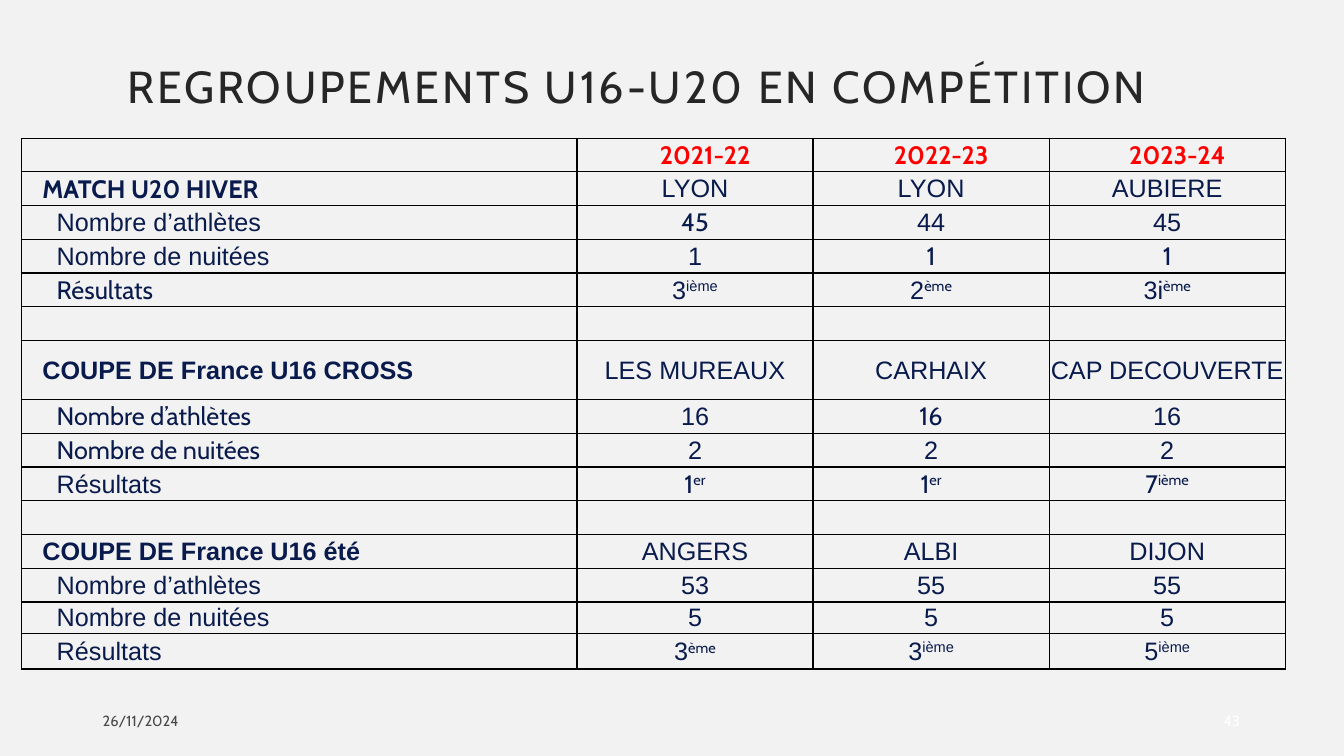
from dataclasses import dataclass

from lxml import etree
from pptx import Presentation
from pptx import util as u
from pptx.dml.color import RGBColor
from pptx.enum import text
from pptx.oxml import ns


@dataclass(frozen=True)
class Theme:
    background: str = "F2F2F2"
    title: str = "262626"
    date: str = "494949"
    number: str = "FFFFFF"
    season: str = "FF0000"
    body: str = "091A4C"
    border: str = "000000"
    display_font: str = "Cabin"
    body_font: str = "Arial"
    title_size: float = 32
    table_size: float = 18
    footer_size: float = 10.5


THEME = Theme()


@dataclass(frozen=True)
class Run:
    text: str
    font: str = THEME.body_font
    color: str = THEME.body
    bold: bool = False
    raised: bool = False


# Kinds of text used in the table
def cabin(words):
    return Run(words, THEME.display_font)


def heading(words, font=THEME.body_font):
    return Run(words, font, bold=True)


def season(words):
    return Run(words, THEME.display_font, THEME.season, bold=True)


def rank(number, suffix, number_font=THEME.body_font, suffix_font=THEME.body_font):
    return [Run(number, number_font), Run(suffix, suffix_font, raised=True)]


CABIN = THEME.display_font
ATHLETES, NIGHTS, RESULTS = "Nombre d’athlètes", "Nombre de nuitées", "Résultats"
EMPTY_ROW = ["", "", "", ""]

ROWS = [
    ["", season("2021-22"), season("2022-23"), season("2023-24")],
    [heading("MATCH U20 HIVER", CABIN), "LYON", "LYON", "AUBIERE"],
    [ATHLETES, cabin("45"), "44", "45"],
    [NIGHTS, "1", cabin("1"), cabin("1")],
    [cabin(RESULTS), rank("3", "ième"), rank("2", "ème", suffix_font=CABIN),
     rank("3i", "ème", suffix_font=CABIN)],
    EMPTY_ROW,
    [heading("COUPE DE France U16 CROSS"), "LES MUREAUX", "CARHAIX", "CAP DECOUVERTE"],
    [cabin(ATHLETES), "16", cabin("16"), "16"],
    [cabin(NIGHTS), "2", "2", "2"],
    [RESULTS, rank("1", "er", CABIN, CABIN), rank("1", "er", CABIN, CABIN),
     rank("7", "ième", CABIN, CABIN)],
    EMPTY_ROW,
    [heading("COUPE DE France U16 été"), "ANGERS", "ALBI", "DIJON"],
    [ATHLETES, "53", "55", "55"],
    [NIGHTS, "5", "5", "5"],
    [RESULTS, rank("3", "ème", suffix_font=CABIN), rank("3", "ième"), rank("5", "ième")],
]
COLUMN_WIDTHS = [14, 5.95, 5.95, 5.95]
ROW_HEIGHT = 0.85
SPECIAL_HEIGHTS = {6: 1.49, 13: 0.79, 14: 0.9}


def add_run(paragraph, words, font, size, color, bold=False):
    run = paragraph.add_run()
    run.text = words
    run.font.name = font
    run.font.size = u.Pt(size)
    run.font.bold = bold
    run.font.color.rgb = RGBColor.from_string(color)
    return run


def add_title(slide, words):
    title = slide.shapes.title
    title.left, title.top = u.Cm(2.34), u.Cm(1.02)
    title.width, title.height = u.Cm(27.43), u.Cm(2.46)
    title.text_frame.vertical_anchor = text.MSO_ANCHOR.MIDDLE
    paragraph = title.text_frame.paragraphs[0]
    paragraph.alignment = text.PP_ALIGN.CENTER
    paragraph.line_spacing = 0.9
    run = add_run(paragraph, words, THEME.display_font, THEME.title_size, THEME.title)
    run.font._element.set("spc", "200")


def add_footer(slide, words, left, width, color, alignment):
    box = slide.shapes.add_textbox(u.Cm(left), u.Cm(17.65), u.Cm(width), u.Cm(1.02))
    frame = box.text_frame
    frame.word_wrap = True
    frame.vertical_anchor = text.MSO_ANCHOR.MIDDLE
    paragraph = frame.paragraphs[0]
    paragraph.alignment = alignment
    add_run(paragraph, words, THEME.display_font, THEME.footer_size, color)


def set_borders(cell):
    properties = cell._tc.get_or_add_tcPr()
    for side in ("lnL", "lnR", "lnT", "lnB"):
        line = etree.SubElement(properties, ns.qn(f"a:{side}"), w=str(u.Pt(1)))
        fill = etree.SubElement(line, ns.qn("a:solidFill"))
        etree.SubElement(fill, ns.qn("a:srgbClr"), val=THEME.border)


def fill_cell(cell, content, left_margin, alignment):
    set_borders(cell)
    cell.fill.background()
    cell.vertical_anchor = text.MSO_ANCHOR.MIDDLE
    cell.margin_left = u.Cm(left_margin)
    cell.margin_right = cell.margin_top = u.Cm(0.02)
    cell.margin_bottom = 0
    paragraph = cell.text_frame.paragraphs[0]
    paragraph.alignment = alignment
    if not content:
        # An empty cell keeps the type size, so its row stays low
        etree.SubElement(paragraph._p, ns.qn("a:endParaRPr"),
                         sz=str(int(THEME.table_size * 100)))
        return
    for part in content if isinstance(content, list) else [content]:
        part = Run(part) if isinstance(part, str) else part
        run = add_run(paragraph, part.text, part.font, THEME.table_size,
                      part.color, part.bold)
        if part.raised:
            run.font._element.set("baseline", "30000")


def cell_layout(row, column, content):
    if column:
        return (0.02 if row else 0.53), text.PP_ALIGN.CENTER
    is_heading = isinstance(content, Run) and content.bold
    return (0.53 if is_heading else 0.89), text.PP_ALIGN.LEFT


def add_results_table(slide):
    heights = [SPECIAL_HEIGHTS.get(row, ROW_HEIGHT) for row in range(len(ROWS))]
    frame = slide.shapes.add_table(len(ROWS), len(COLUMN_WIDTHS), u.Cm(0.54), u.Cm(3.48),
                                   u.Cm(sum(COLUMN_WIDTHS)), u.Cm(sum(heights)))
    table = frame.table
    table.first_row = table.horz_banding = False
    for column, width in zip(table.columns, COLUMN_WIDTHS):
        column.width = u.Cm(width)
    for row, height in zip(table.rows, heights):
        row.height = u.Cm(height)
    for row, contents in enumerate(ROWS):
        for column, content in enumerate(contents):
            fill_cell(table.cell(row, column), content, *cell_layout(row, column, content))


def main():
    presentation = Presentation()
    presentation.slide_width, presentation.slide_height = u.Cm(33.87), u.Cm(19.05)
    slide = presentation.slides.add_slide(presentation.slide_layouts[5])
    slide.background.fill.solid()
    slide.background.fill.fore_color.rgb = RGBColor.from_string(THEME.background)

    add_title(slide, "REGROUPEMENTS U16-U20 EN COMPÉTITION")
    add_footer(slide, "26/11/2024", 2.34, 7.62, THEME.date, text.PP_ALIGN.LEFT)
    add_footer(slide, "43", 28.5, 3, THEME.number, text.PP_ALIGN.RIGHT)
    add_results_table(slide)
    presentation.save("out.pptx")


if __name__ == "__main__":
    main()
